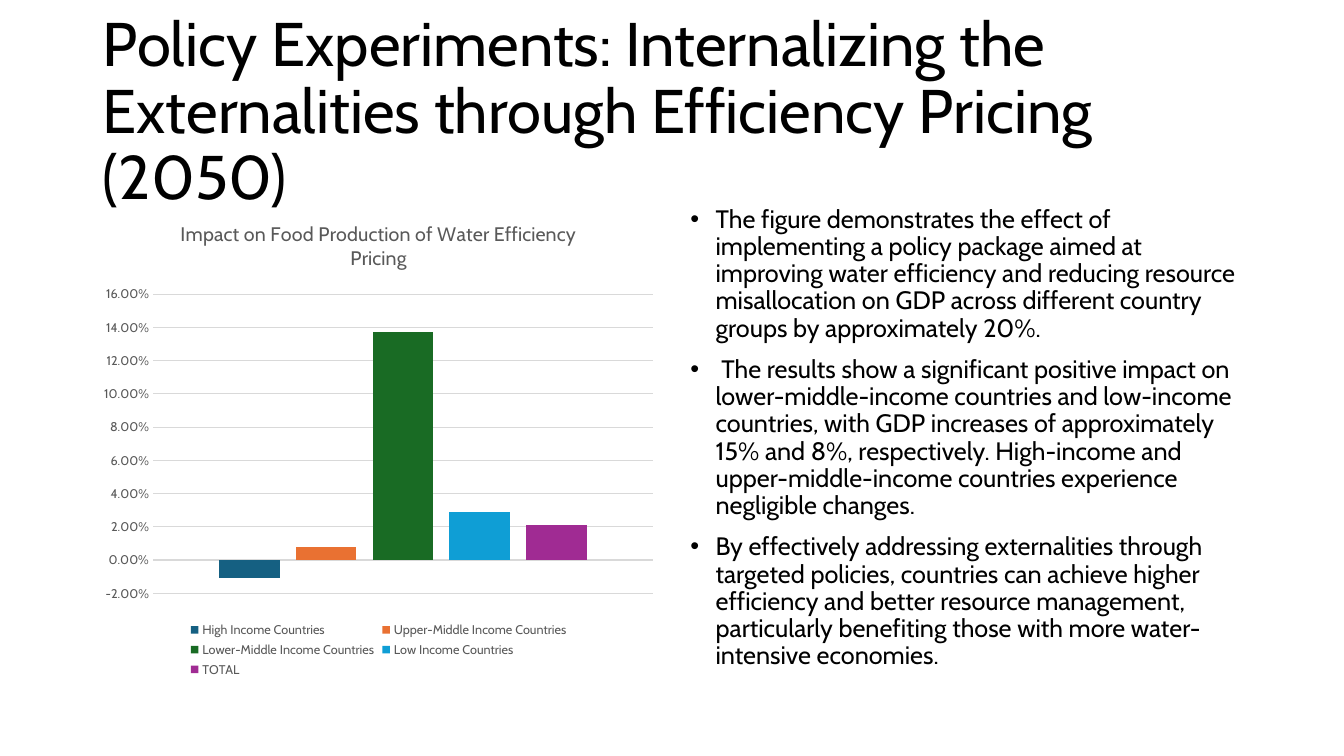
"""Build the slide on efficiency pricing and its impact on food production."""
from lxml import etree
from pptx import Presentation
from pptx.chart.data import CategoryChartData
from pptx.dml.color import RGBColor
from pptx.enum.chart import XL_CHART_TYPE, XL_LEGEND_POSITION, XL_TICK_MARK
from pptx.enum.text import MSO_ANCHOR
from pptx.oxml.ns import qn
from pptx.util import Inches, Pt

COLUMNS = XL_CHART_TYPE.COLUMN_CLUSTERED
BOTTOM = XL_LEGEND_POSITION.BOTTOM
NO_TICK = XL_TICK_MARK.NONE
MIDDLE, TOP = MSO_ANCHOR.MIDDLE, MSO_ANCHOR.TOP

FONT = "Cabin"
BLACK, GRAY, GRID = "000000", "595959", "D9D9D9"

TITLE = "Policy Experiments: Internalizing the Externalities through Efficiency Pricing (2050)"
CHART_TITLE = "Impact on Food Production of Water Efficiency Pricing"
SERIES = [
    ("High Income Countries", -0.011, "156082"),
    ("Upper-Middle Income Countries", 0.008, "E97132"),
    ("Lower-Middle Income Countries", 0.137, "196B24"),
    ("Low Income Countries", 0.029, "0F9ED5"),
    ("TOTAL", 0.021, "A02B93"),
]
BULLETS = [
    "The figure demonstrates the effect of implementing a policy package aimed at improving "
    "water efficiency and reducing resource misallocation on GDP across different country "
    "groups by approximately 20%.",
    " The results show a significant positive impact on lower-middle-income countries and "
    "low-income countries, with GDP increases of approximately 15% and 8%, respectively. "
    "High-income and upper-middle-income countries experience negligible changes.",
    "By effectively addressing externalities through targeted policies, countries can achieve "
    "higher efficiency and better resource management, particularly benefiting those with "
    "more water-intensive economies.",
]

MARGIN, CONTENT_WIDTH, GAP = 0.92, 11.5, 0.16
COLUMN_WIDTH = (CONTENT_WIDTH - GAP) / 2
COLUMN_TOP, COLUMN_HEIGHT = 2, 4.76


def color(value):
    return RGBColor.from_string(value)


def style(font, size, value):
    font.name = FONT
    font.size = Pt(size)
    font.bold = False
    font.color.rgb = color(value)


def add_text(page, place, lines, size, anchor, bulleted=False):
    box = page.shapes.add_textbox(*(Inches(length) for length in place))
    frame = box.text_frame
    frame.word_wrap = True
    frame.vertical_anchor = anchor
    for index, line in enumerate(lines):
        para = frame.add_paragraph() if index else frame.paragraphs[0]
        if bulleted:
            properties = para._p.get_or_add_pPr()
            properties.set("marL", str(Inches(0.25)))
            properties.set("indent", str(-Inches(0.25)))
            etree.SubElement(properties, qn("a:buFont")).set("typeface", "Arial")
            etree.SubElement(properties, qn("a:buChar")).set("char", "•")
        para.line_spacing = 0.9
        if index:
            para.space_before = Pt(10)
        span = para.add_run()
        span.text = line
        style(span.font, size, BLACK)


def add_impact_chart(page, place):
    data = CategoryChartData(number_format="0.00%")
    data.categories = ["1"]
    for name, value, _ in SERIES:
        data.add_series(name, [value])
    chart = page.shapes.add_chart(
        COLUMNS, *(Inches(length) for length in place), data).chart
    style(chart.font, 10, BLACK)

    chart.has_title = True
    span = chart.chart_title.text_frame.paragraphs[0].add_run()
    span.text = CHART_TITLE
    style(span.font, 14, GRAY)
    chart.chart_title.include_in_layout = False

    chart.has_legend = True
    chart.legend.position = BOTTOM
    chart.legend.include_in_layout = False
    style(chart.legend.font, 9, GRAY)

    chart.category_axis.visible = False
    axis = chart.value_axis
    axis.minimum_scale, axis.maximum_scale, axis.major_unit = -0.02, 0.16, 0.02
    axis.major_tick_mark = axis.minor_tick_mark = NO_TICK
    axis.tick_labels.number_format = "0.00%"
    axis.tick_labels.number_format_is_linked = False
    style(axis.tick_labels.font, 9, GRAY)
    axis.format.line.fill.background()
    grid = axis.major_gridlines.format.line
    grid.color.rgb = color(GRID)
    grid.width = Pt(0.75)

    plot = chart.plots[0]
    plot.vary_by_categories = False
    plot.gap_width, plot.overlap = 219, -27
    for series, (_, _, fill) in zip(plot.series, SERIES):
        series.invert_if_negative = False
        series.format.fill.solid()
        series.format.fill.fore_color.rgb = color(fill)


def main():
    deck = Presentation()
    deck.slide_width, deck.slide_height = Inches(13.33), Inches(7.5)
    page = deck.slides.add_slide(deck.slide_layouts[6])
    add_text(page, (MARGIN, 0.4, CONTENT_WIDTH, 1.45), [TITLE], 44, MIDDLE)
    add_impact_chart(page, (MARGIN, COLUMN_TOP, COLUMN_WIDTH, COLUMN_HEIGHT))
    right = MARGIN + COLUMN_WIDTH + GAP
    add_text(page, (right, COLUMN_TOP, COLUMN_WIDTH, COLUMN_HEIGHT), BULLETS, 18, TOP, True)
    deck.save("out.pptx")


if __name__ == "__main__":
    main()
